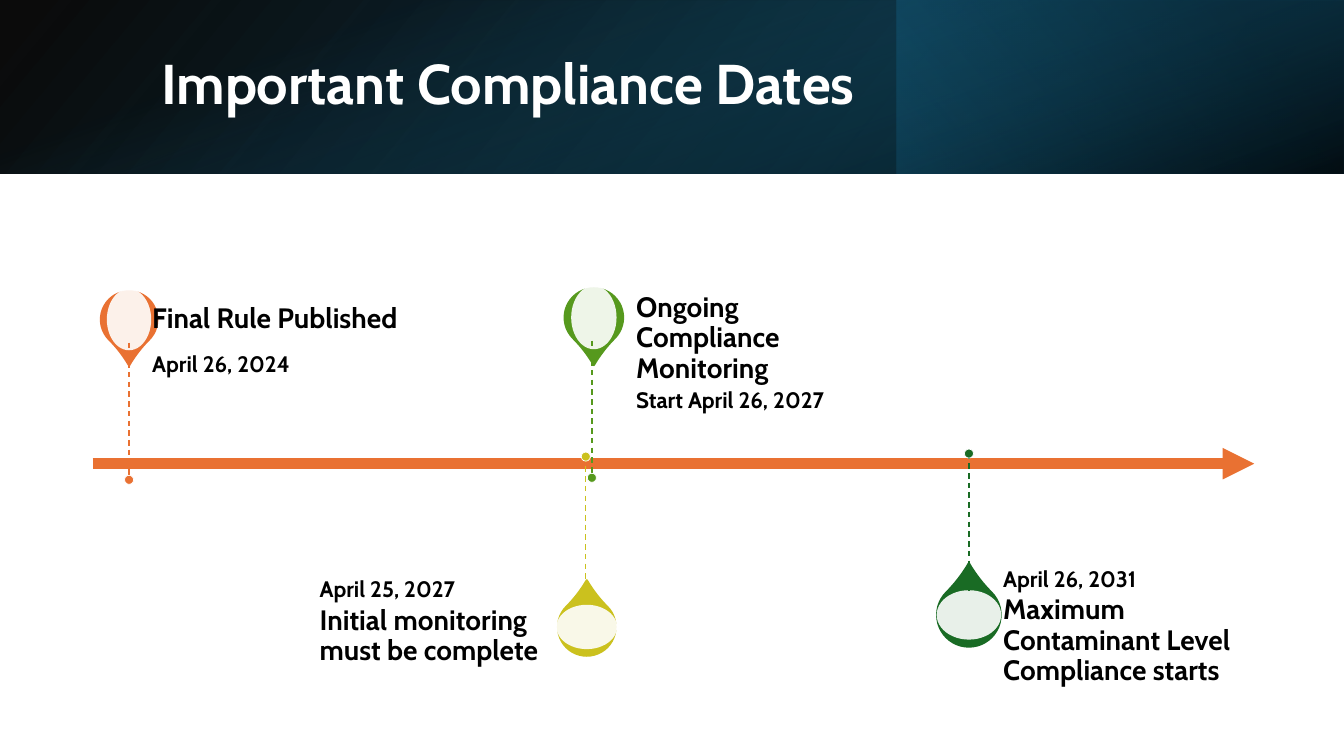
from dataclasses import dataclass

from pptx import Presentation
from pptx import util as u
from pptx.dml.color import RGBColor
from pptx.enum import dml, shapes, text
from pptx.oxml.ns import qn
from pptx.oxml.xmlchemy import OxmlElement

FONT = "Cabin"
COLORS = {
    "white": "FFFFFF", "black": "000000", "orange": "E97132", "yellow": "CBC11E",
    "lime": "56991D", "green": "196B24", "navy": "104862", "deep": "0B3041",
    "teal": "156082",
}
STEM_LENGTH = 1.36
DOT_SIZE = 0.09
LABEL_WIDTH, LABEL_HEIGHT, DATE_HEIGHT = 2.58, 0.48, 1.36


@dataclass
class Band:
    box: tuple[float, float, float, float]
    stops: list[tuple[float, str, int]]  # position, color, opacity in percent
    angle: int  # clockwise
    rotation: int = 0
    flipped: bool = False


@dataclass
class Milestone:
    date: str
    label: str
    color: str
    above: bool
    pin: tuple[float, float, float]  # center x, center y, size
    window: tuple[float, float]
    stem: tuple[float, float]  # x, top
    label_at: tuple[float, float]
    date_gap: float = 0  # extra distance between date and label


BANDS = [
    Band((0, 0, 13.33, 1.72), [(0, "black", 96), (1, "navy", 100)], 140, flipped=True),
    Band((8.89, 0, 4.44, 1.72), [(0.19, "deep", 68), (1, "teal", 79)], 320, 180),
    Band((5.8, -5.8, 1.72, 13.33), [(0.23, "teal", 0), (0.99, "black", 74)], 340, 90),
]
MILESTONES = [
    Milestone("April 26, 2024", "Final Rule Published", "orange", True,
              (1.28, 3.17, 0.56), (0.44, 0.61), (1.28, 3.4), (1.51, 2.93)),
    Milestone("April 25, 2027", "Initial monitoring must be complete", "yellow", False,
              (5.82, 6.22, 0.57), (0.6, 0.44), (5.81, 4.53), (3.17, 6.07)),
    Milestone("Start April 26, 2027", "Ongoing Compliance Monitoring", "lime", True,
              (5.89, 3.15, 0.58), (0.45, 0.63), (5.87, 3.38), (6.31, 3.12), 0.34),
    Milestone("April 26, 2031", "Maximum Contaminant Level Compliance starts", "green",
              False, (9.61, 6.1, 0.63), (0.64, 0.49), (9.61, 4.5), (9.95, 6.12), 0.3),
]


def rgb(name: str) -> RGBColor:
    return RGBColor.from_string(COLORS[name])


def set_opacity(sp, percents: list[int]) -> None:
    """Set the opacity of the fill colors, in order."""
    for color, percent in zip(sp._element.spPr.iter(qn("a:srgbClr")), percents):
        alpha = OxmlElement("a:alpha")
        alpha.set("val", str(percent * 1000))
        color.append(alpha)


def add_plain(s, kind, box: tuple):
    sp = s.shapes.add_shape(kind, *map(u.Inches, box))
    sp.shadow.inherit = False
    sp.line.fill.background()
    return sp


def add_round(s, kind, x: float, y: float, w: float, h: float, fill: str,
              line: str = "", width: float = 0):
    """Add a shape centered on x, y."""
    sp = add_plain(s, kind, (x - w / 2, y - h / 2, w, h))
    sp.fill.solid()
    sp.fill.fore_color.rgb = rgb(fill)
    if line:
        sp.line.color.rgb = rgb(line)
        sp.line.width = u.Pt(width)
    return sp


def add_line(s, start: tuple, end: tuple, color: str, width: float):
    line = s.shapes.add_connector(shapes.MSO_CONNECTOR.STRAIGHT,
                                  *map(u.Inches, start + end))
    line.line.color.rgb = rgb(color)
    line.line.width = u.Pt(width)
    line._element.spPr.append(OxmlElement("a:effectLst"))
    return line


def write(tf, words: str, size: float, color: str, anchor) -> None:
    tf.word_wrap = True
    tf.vertical_anchor = anchor
    p = tf.paragraphs[0]
    p.text = words
    p.alignment = text.PP_ALIGN.LEFT
    p.line_spacing = 0.9
    p.font.name, p.font.size, p.font.bold = FONT, u.Pt(size), True
    p.font.color.rgb = rgb(color)


def add_text(s, box: tuple, insets: tuple, words: str, size: float, anchor) -> None:
    tf = s.shapes.add_textbox(*map(u.Inches, box)).text_frame
    (tf.margin_left, tf.margin_top,
     tf.margin_right, tf.margin_bottom) = map(u.Inches, insets)
    write(tf, words, size, "black", anchor)
    tf.paragraphs[0].space_after = u.Pt(0.35 * size)


def add_band(s, band: Band) -> None:
    sp = add_plain(s, shapes.MSO_SHAPE.RECTANGLE, band.box)
    sp.rotation = band.rotation
    if band.flipped:
        sp._element.spPr.xfrm.set("flipH", "1")
    sp.fill.gradient()
    sp.fill.gradient_angle = 360 - band.angle
    for stop, (position, color, _) in zip(sp.fill.gradient_stops, band.stops):
        stop.position = position
        stop.color.rgb = rgb(color)
    set_opacity(sp, [opacity for _, _, opacity in band.stops])
    s.shapes.title._element.addprevious(sp._element)  # keep behind the title


def add_milestone(s, m: Milestone) -> None:
    # Pin with its pale window
    x, y, size = m.pin
    pin = add_round(s, shapes.MSO_SHAPE.TEAR, x, y, size, size, m.color, m.color, 1.5)
    pin.adjustments[0] = 1.15
    pin.rotation = 135 if m.above else 315
    window = add_round(s, shapes.MSO_SHAPE.OVAL, x, y, *m.window, "white")
    set_opacity(window, [90])

    # Date and label
    left, top = m.label_at
    if m.above:
        date_top, anchor = top + LABEL_HEIGHT, text.MSO_ANCHOR.TOP
        insets = (0, 0.11 + m.date_gap, 0.11, 0.17)
    else:
        date_top, anchor = top - DATE_HEIGHT, text.MSO_ANCHOR.BOTTOM
        insets = (0, 0.17, 0, 0.11 + m.date_gap)
    add_text(s, (left, date_top, LABEL_WIDTH, DATE_HEIGHT), insets, m.date, 16, anchor)
    add_text(s, (left, top, LABEL_WIDTH, LABEL_HEIGHT), (0, 0, 0.14, 0), m.label, 20,
             text.MSO_ANCHOR.MIDDLE)

    # Dashed stem with a dot at the axis
    x, top = m.stem
    bottom = top + STEM_LENGTH
    stem = add_line(s, (x, top), (x, bottom), m.color, 1)
    stem.line.dash_style = dml.MSO_LINE.DASH
    add_round(s, shapes.MSO_SHAPE.OVAL, x, bottom if m.above else top,
              DOT_SIZE, DOT_SIZE, m.color, "white", 0.5)


def main() -> None:
    prs = Presentation()
    prs.slide_width, prs.slide_height = u.Inches(13.33), u.Inches(7.5)
    s = prs.slides.add_slide(prs.slide_layouts[5])

    # Header
    for band in BANDS:
        add_band(s, band)
    title = s.shapes.title
    title.left, title.top, title.width, title.height = map(
        u.Inches, (1.5, 0.38, 10.98, 0.96))
    write(title.text_frame, "Important Compliance Dates", 40, "white",
          text.MSO_ANCHOR.MIDDLE)

    # Time axis
    axis = add_line(s, (0.92, 4.6), (12.44, 4.6), "orange", 7.5)
    arrowhead = OxmlElement("a:tailEnd")
    arrowhead.set("type", "triangle")
    axis.line._get_or_add_ln().append(arrowhead)

    # Milestones
    for milestone in MILESTONES:
        add_milestone(s, milestone)

    prs.save("out.pptx")


if __name__ == "__main__":
    main()
